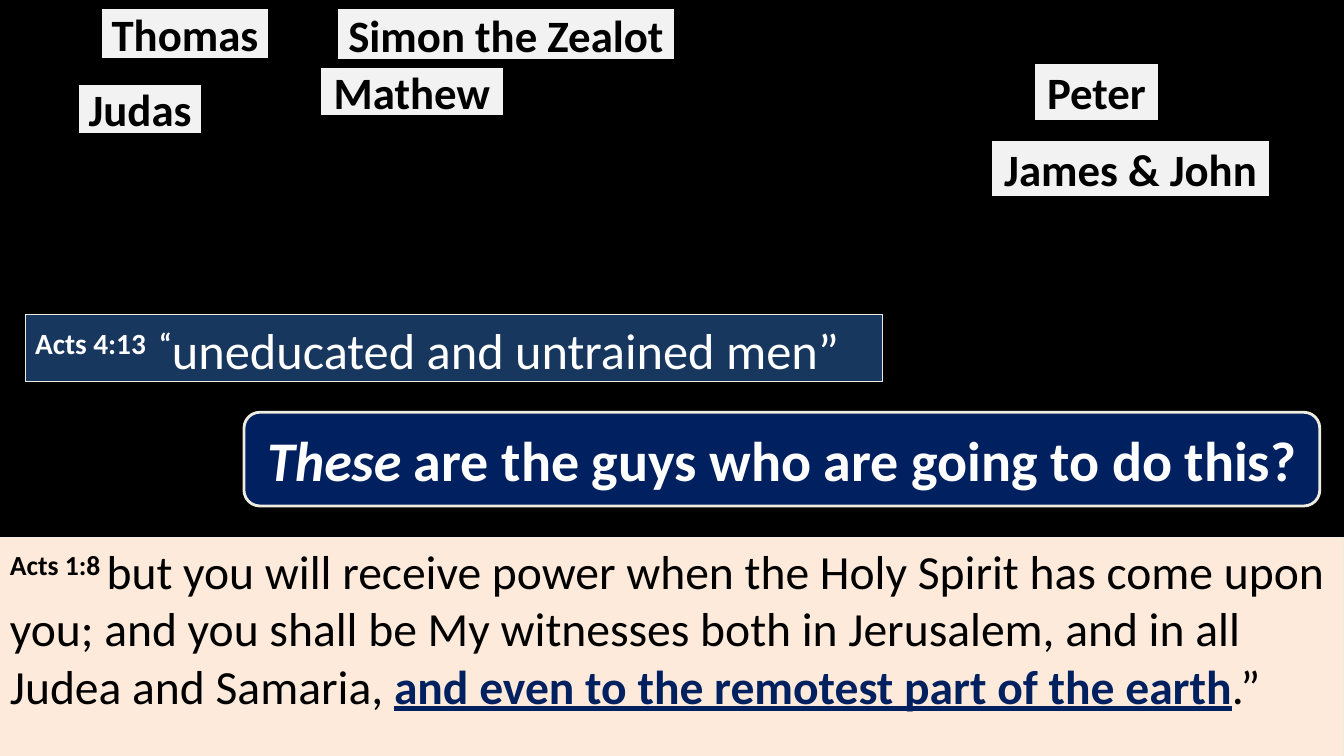
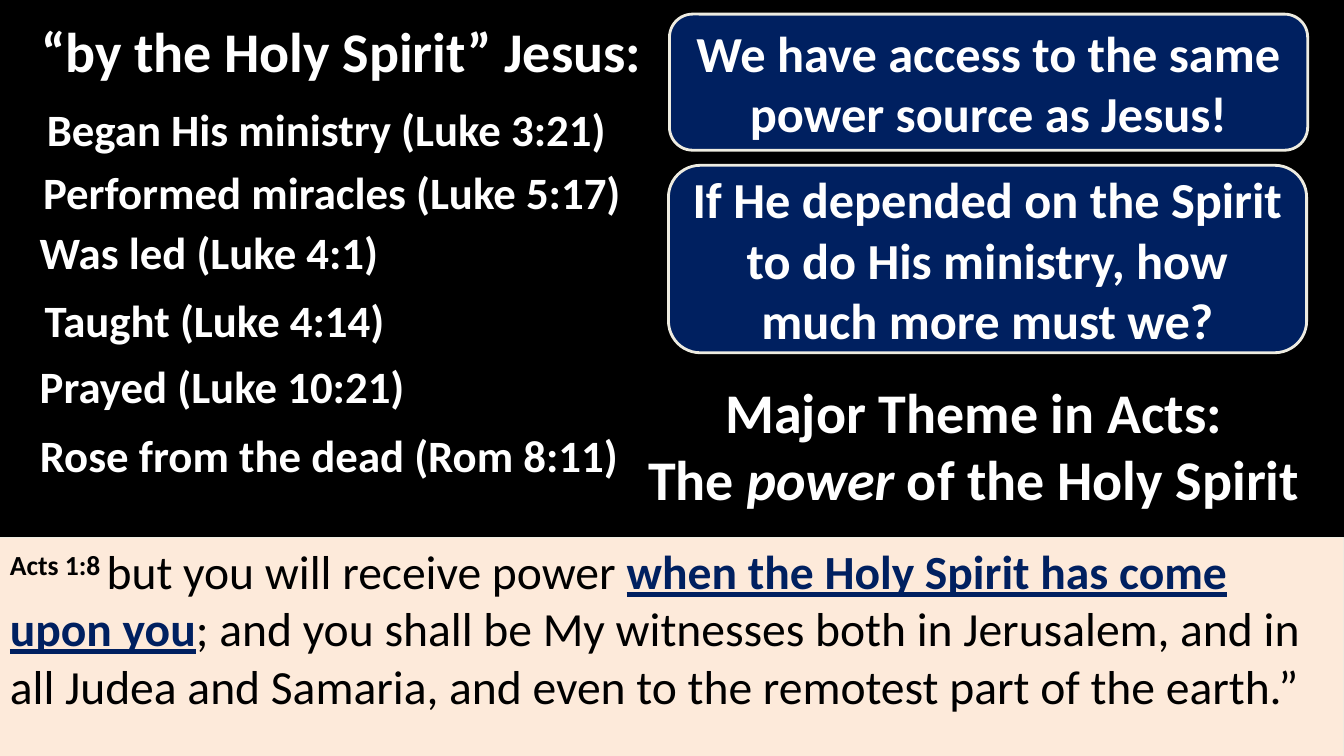
"""Builds two slides on the witnesses of Acts 1:8 and the power they receive."""
from pptx import Presentation
from pptx.dml.color import RGBColor
from pptx.enum.shapes import MSO_SHAPE
from pptx.enum.text import MSO_ANCHOR, PP_ALIGN
from pptx.util import Inches, Pt

BLACK, WHITE, NAVY, BLUE = "000000", "FFFFFF", "002060", "17375E"
PEACH, IVORY, GREY = "FDEADA", "EEECE1", "F2F2F2"
FONT = "Calibri"
BUBBLE = (-0.22, 0.5, 0.17)


def add_box(page, kind, place, fill=None, line=None, width=2, adjust=()):
    """Add a flat shape, filled and outlined only where colours are given."""
    box = page.shapes.add_shape(kind, *[Inches(length) for length in place])
    box.shadow.inherit = False
    for number, value in enumerate(adjust):
        box.adjustments[number] = value
    if fill:
        box.fill.solid()
        box.fill.fore_color.rgb = RGBColor.from_string(fill)
    else:
        box.fill.background()
    if line:
        box.line.color.rgb = RGBColor.from_string(line)
        box.line.width = Pt(width)
    else:
        box.line.fill.background()
    return box


def write(box, spans, size, color, centred=True):
    """Write (text, style) spans; styles are bold, plain, italic, raised, key and break."""
    frame = box.text_frame
    frame.word_wrap = True
    frame.vertical_anchor = MSO_ANCHOR.MIDDLE if centred else MSO_ANCHOR.TOP
    para = frame.paragraphs[0]
    para.alignment = PP_ALIGN.CENTER if centred else PP_ALIGN.LEFT
    for text, style in spans:
        if style == "break":
            para.add_line_break()
            continue
        span = para.add_run()
        span.text = text
        span.font.name = FONT
        span.font.size = Pt(size)
        span.font.bold = style != "plain"
        span.font.italic = style == "italic"
        span.font.underline = style == "key"
        span.font.color.rgb = RGBColor.from_string(NAVY if style == "key" else color)
        if style == "raised":
            span._r.get_or_add_rPr().set("baseline", "30000")


deck = Presentation()
deck.slide_width, deck.slide_height = Inches(13.33), Inches(7.5)
backdrop = deck.slide_master.background.fill
backdrop.solid()
backdrop.fore_color.rgb = RGBColor.from_string(BLACK)

verses = [
    [("but you will receive power when the Holy Spirit has come upon you; and you shall be "
      "My witnesses both in Jerusalem, and in all Judea and Samaria, ", "plain"),
     ("and even to the remotest part of the earth", "key"),
     (".”", "plain")],
    [("but you will receive power ", "plain"),
     ("when the Holy Spirit has come upon you", "key"),
     ("; and you shall be My witnesses both in Jerusalem, and in all Judea and Samaria, "
      "and even to the remotest part of the earth.”", "plain")],
]
pages = []
for verse in verses:
    page = deck.slides.add_slide(deck.slide_layouts[6])
    band = add_box(page, MSO_SHAPE.RECTANGLE, (0, 5.33, 13.33, 2.18), PEACH, IVORY, 0.75)
    write(band, [("Acts 1:8 ", "raised")] + verse, 34, BLACK, centred=False)
    pages.append(page)
disciples_page, power_page = pages

disciples = [
    ("Peter", (10.25, 0.62, 1.25, 0.58), (0.42, -0.01, 0.42, -0.17, 3.4, -0.2)),
    ("Thomas", (1, 0.08, 1.67, 0.51), (0.99, 0.92, 1.24, 0.92, 1.89, 1.02)),
    ("Mathew", (3.17, 0.66, 1.83, 0.5), (1.02, 0.16, 1.34, 0.3, 1.32, 0.52)),
    ("Simon the Zealot", (3.34, 0.08, 3.36, 0.52), (1.02, 0.72, 1.42, 0.7, 2.32, 0.6)),
    ("Judas", (0.77, 0.83, 1.24, 0.5), (0.38, 1, 0.38, 1.14, 0.72, 1.24)),
    ("James & John", (9.83, 1.38, 2.77, 0.58), (1.02, 0.91, 1.42, 0.91, 1.83, 0.73)),
]
for name, place, pointer in disciples:
    label = add_box(disciples_page, MSO_SHAPE.LINE_CALLOUT_2, place, GREY, BLACK, adjust=pointer)
    write(label, [(name, "bold")], 32, BLACK)

quote = add_box(disciples_page, MSO_SHAPE.RECTANGLE, (0.25, 3.12, 8.5, 0.67), BLUE, IVORY, 0.75)
write(quote, [("Acts 4:13  “", "raised"), ("uneducated and untrained men”", "plain")],
      36, WHITE, centred=False)

statements = [
    (disciples_page, (2.42, 4.09, 10.67, 0.93), 40,
     [("These", "italic"), (" are the guys who are going to do this?", "bold")]),
    (power_page, (6.63, 1.64, 6.33, 1.86), 36,
     [("If He depended on the Spirit to do His ministry, how much more must we?", "bold")]),
    (power_page, (6.64, 0.14, 6.33, 1.35), 36,
     [("We have access to the same power source as Jesus!", "bold")]),
]
for page, place, size, spans in statements:
    bubble = add_box(page, MSO_SHAPE.ROUNDED_RECTANGULAR_CALLOUT, place, NAVY, IVORY, adjust=BUBBLE)
    write(bubble, spans, size, WHITE)

headings = [
    ((4.83, 3.83, 9.78, 1.16),
     [("Major Theme in Acts: ", "bold"), ("", "break"), ("The ", "bold"),
      ("power", "italic"), (" of the Holy Spirit ", "bold")]),
    ((0.13, 0.25, 6.51, 0.5), [("“by the Holy Spirit” Jesus:", "bold")]),
]
for place, spans in headings:
    heading = add_box(power_page, MSO_SHAPE.ROUNDED_RECTANGULAR_CALLOUT, place, adjust=BUBBLE)
    write(heading, spans, 40, WHITE)

deeds = [
    ("Began His ministry (Luke 3:21) ", 0.33, 1.03, 5.82),
    ("Performed miracles (Luke 5:17) ", 0.29, 1.65, 6.01),
    ("Was led (Luke 4:1) ", 0.25, 2.25, 3.75),
    ("Taught (Luke 4:14) ", 0.28, 2.92, 3.7),
    ("Prayed (Luke 10:21) ", 0.26, 3.58, 3.89),
    ("Rose from the dead (Rom 8:11) ", 0.23, 4.26, 6.07),
]
for text, left, top, width in deeds:
    deed = add_box(power_page, MSO_SHAPE.ROUNDED_RECTANGULAR_CALLOUT, (left, top, width, 0.5),
                   adjust=BUBBLE)
    write(deed, [(text, "bold")], 32, WHITE)

deck.save("out.pptx")
